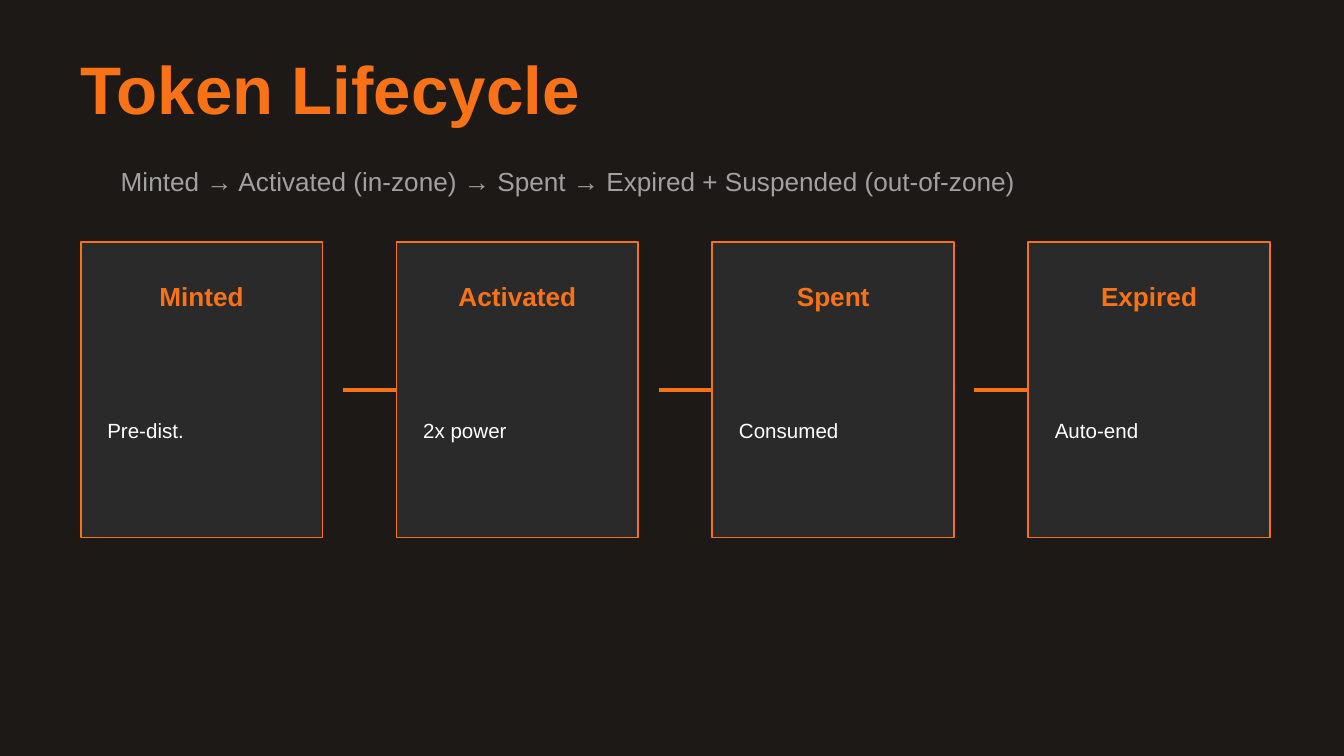
"""Build the Token Lifecycle slide: four state cards joined by lines."""
import dataclasses

import lxml.etree
import pptx
import pptx.dml.color
import pptx.enum.shapes
import pptx.enum.text
import pptx.oxml.ns
import pptx.util


@dataclasses.dataclass(frozen=True)
class Theme:
    font: str = "Arial"
    background: str = "1C1917"
    card: str = "2A2A2A"
    accent: str = "F97316"
    muted: str = "A1A1A1"
    light: str = "FFFFFF"
    title_size: int = 36
    heading_size: int = 14
    detail_size: int = 11


THEME = Theme()
PX = pptx.util.Inches(1) // 200
RGB = pptx.dml.color.RGBColor.from_string
ALIGN = pptx.enum.text.PP_ALIGN


def place_text(shape, box, text, size, color, bold=False, align=ALIGN.LEFT):
    shape.left, shape.top, shape.width, shape.height = [value * PX for value in box]
    frame = shape.text_frame
    frame.text = text
    frame.word_wrap = True
    frame.auto_size = pptx.enum.text.MSO_AUTO_SIZE.NONE
    frame.vertical_anchor = pptx.enum.text.MSO_ANCHOR.MIDDLE
    paragraph = frame.paragraphs[0]
    paragraph.alignment = align
    font = paragraph.runs[0].font
    font.name = THEME.font
    font.size = pptx.util.Pt(size)
    font.bold = bold
    font.color.rgb = RGB(color)


presentation = pptx.Presentation()
presentation.slide_width = 2000 * PX
presentation.slide_height = 1125 * PX
slide = presentation.slides.add_slide(presentation.slide_layouts[5])
slide.background.fill.solid()
slide.background.fill.fore_color.rgb = RGB(THEME.background)
shapes = slide.shapes

place_text(shapes.title, (100, 80, 1800, 100), "Token Lifecycle",
           THEME.title_size, THEME.accent, bold=True)
place_text(shapes.add_textbox(0, 0, 0, 0), (160, 220, 1680, 100),
           "Minted → Activated (in-zone) → Spent → Expired + Suspended (out-of-zone)",
           THEME.heading_size, THEME.muted)

STATES = [
    ("Minted", "Pre-dist."),
    ("Activated", "2x power"),
    ("Spent", "Consumed"),
    ("Expired", "Auto-end"),
]
CARD_LEFT, CARD_TOP, CARD_WIDTH, CARD_HEIGHT = 120, 360, 360, 440
CARD_STEP = 470
LINE_GAP, LINE_LENGTH = 30, 100

for index, (state, detail) in enumerate(STATES):
    left = CARD_LEFT + index * CARD_STEP
    card = shapes.add_shape(pptx.enum.shapes.MSO_SHAPE.RECTANGLE, left * PX,
                            CARD_TOP * PX, CARD_WIDTH * PX, CARD_HEIGHT * PX)
    card.shadow.inherit = False
    card.fill.solid()
    card.fill.fore_color.rgb = RGB(THEME.card)
    card.line.color.rgb = RGB(THEME.accent)
    card.line.width = pptx.util.Pt(1)

    place_text(shapes.add_textbox(0, 0, 0, 0), (left, CARD_TOP + 40, CARD_WIDTH, 80),
               state, THEME.heading_size, THEME.accent, bold=True, align=ALIGN.CENTER)
    place_text(shapes.add_textbox(0, 0, 0, 0),
               (left + 20, CARD_TOP + 160, CARD_WIDTH - 40, 240),
               detail, THEME.detail_size, THEME.light)

    if index < len(STATES) - 1:
        start = left + CARD_WIDTH + LINE_GAP
        middle = CARD_TOP + CARD_HEIGHT // 2
        connector = shapes.add_connector(
            pptx.enum.shapes.MSO_CONNECTOR.STRAIGHT, start * PX, middle * PX,
            (start + LINE_LENGTH) * PX, middle * PX)
        connector.line.color.rgb = RGB(THEME.accent)
        connector.line.width = pptx.util.Pt(2)
        lxml.etree.SubElement(connector.element.spPr, pptx.oxml.ns.qn("a:effectLst"))

presentation.save("out.pptx")
